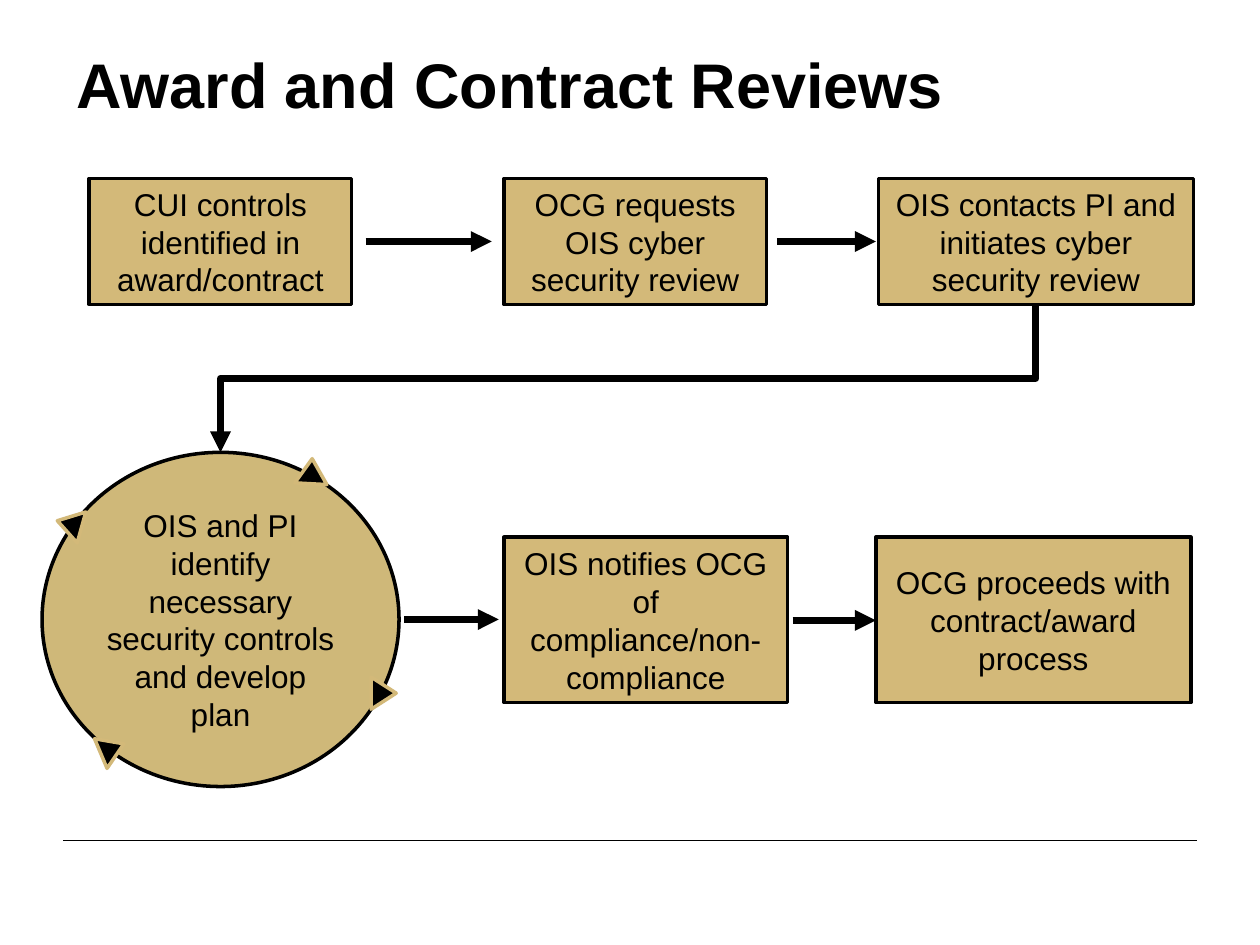
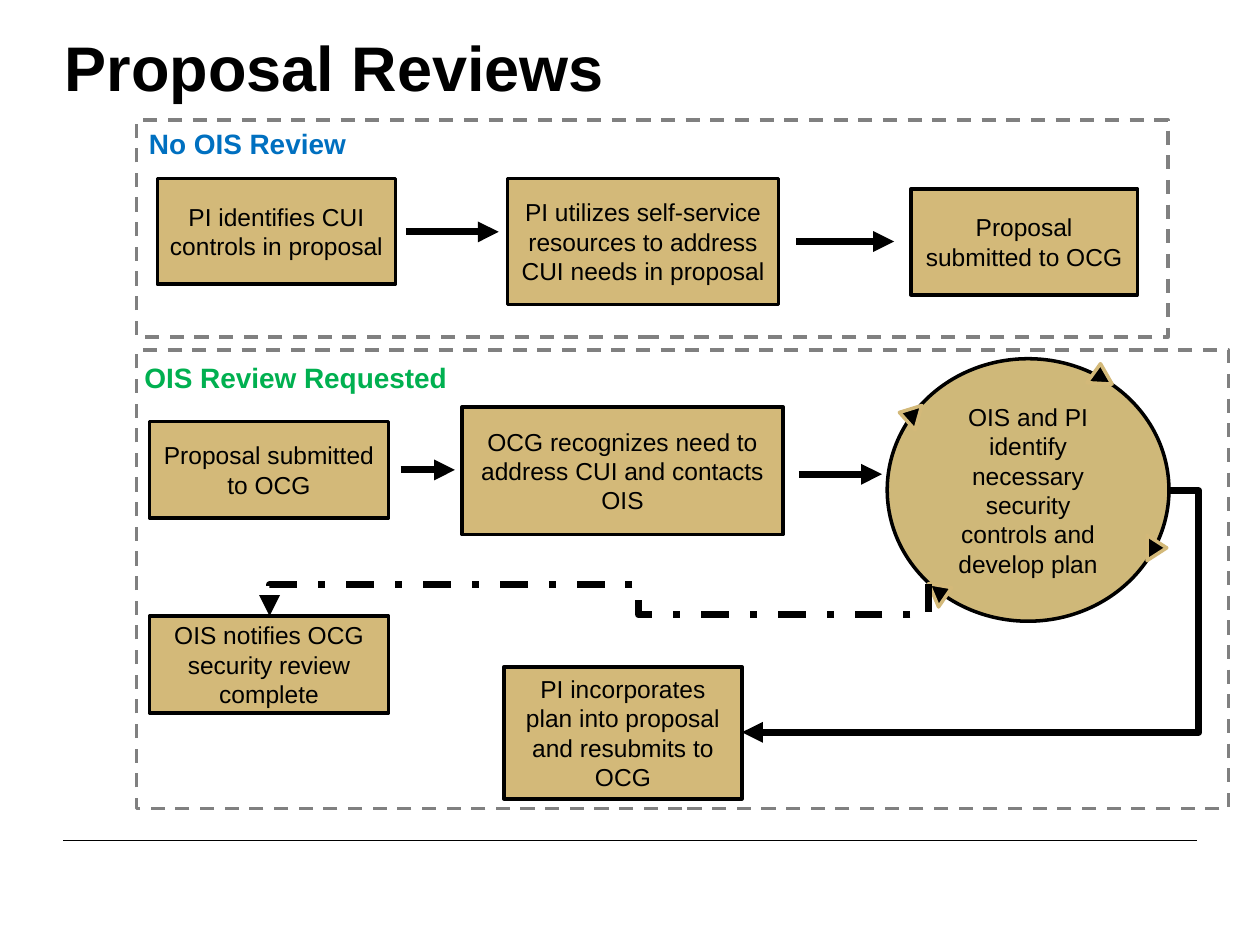
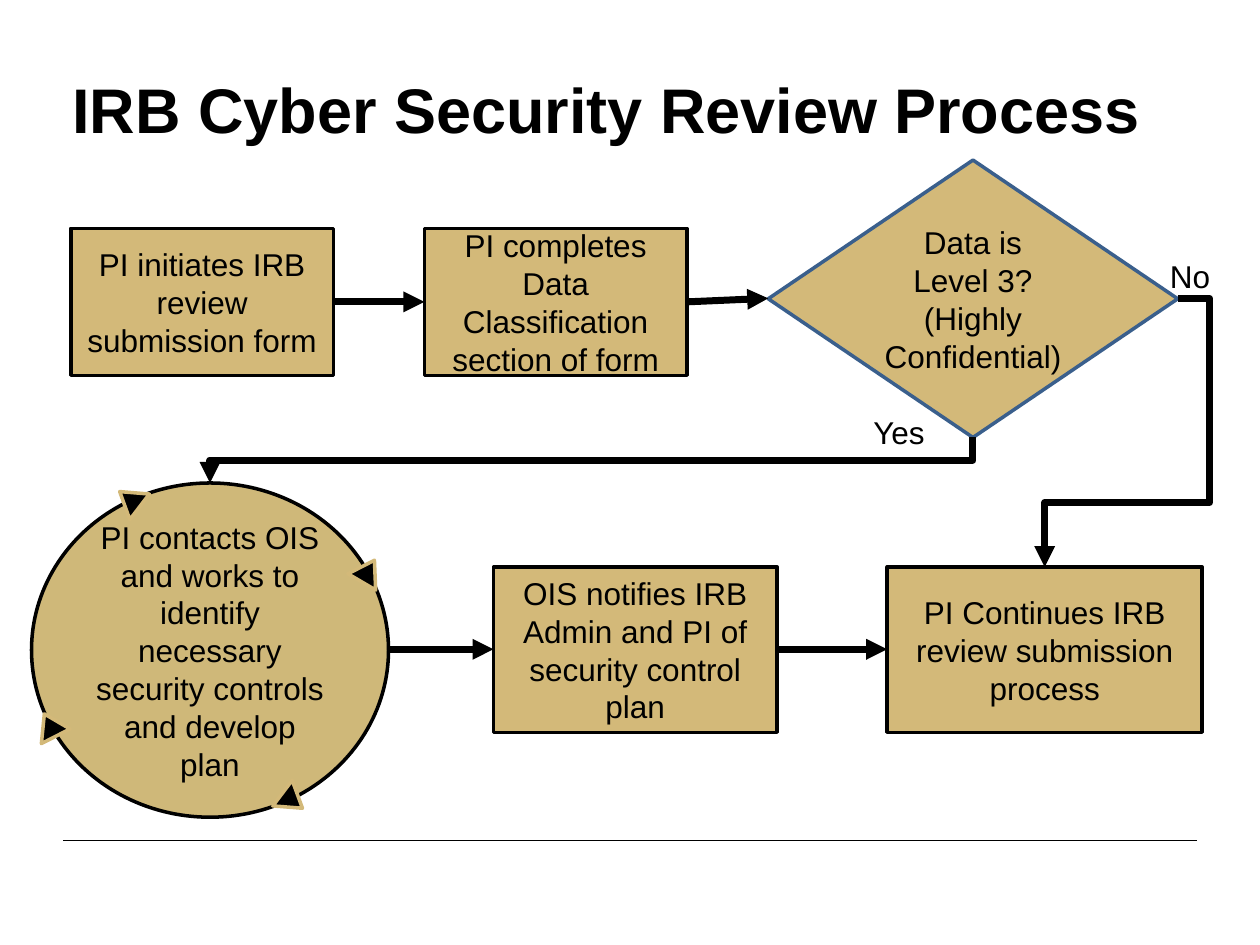
from lxml.etree import SubElement
from pptx import Presentation
from pptx.dml.color import RGBColor
from pptx.enum.dml import MSO_LINE
from pptx.enum.shapes import MSO_CONNECTOR, MSO_SHAPE
from pptx.enum.text import MSO_ANCHOR, MSO_AUTO_SIZE, PP_ALIGN
from pptx.oxml.ns import qn
from pptx.util import Pt

BLACK = RGBColor(0x00, 0x00, 0x00)
GOLD = RGBColor(0xD3, 0xB9, 0x79)
LOOP_GOLD = RGBColor(0xCF, 0xB8, 0x79)
GRAY = RGBColor(0x80, 0x80, 0x80)
BLUE = RGBColor(0x00, 0x70, 0xC0)
GREEN = RGBColor(0x00, 0xB0, 0x50)
STEEL = RGBColor(0x3A, 0x5F, 0x8C)

PLAN = "OIS and PI identify necessary security controls and develop plan"
PLAN_MARKS = [(71, 1.9, 3.1), (15.2, 84.9, 67.1), (3.2, 17.7, 285.6), (91.2, 68.3, 90)]
IRB_MARKS = [(89.8, 22.6, 30.3), (0.7, 68.7, 333), (68.6, 91.3, 127.2), (23, 1.1, 307.4)]


class FlowDeck:
    """Draws flow-chart slides in one shared style."""

    def __init__(self, prs):
        self.prs = prs
        self.s = None
        self.size = 18

    def slide(self, size):
        self.s = self.prs.slides.add_slide(self.prs.slide_layouts[6])
        self.size = size
        self.line((36, 480), (684, 480), width=0.5, head=False)

    def fill_text(self, tf, text, align, **formats):
        p = tf.paragraphs[0]
        p.alignment = align
        r = p.add_run()
        r.text = text
        values = {"name": "Arial", "size": Pt(self.size), "bold": False, **formats}
        r.font.color.rgb = values.pop("color", BLACK)
        for name, value in values.items():
            setattr(r.font, name, value)

    def text(self, x, y, w, h, text, wrap=True, align=PP_ALIGN.LEFT, **formats):
        tf = self.s.shapes.add_textbox(Pt(x), Pt(y), Pt(w), Pt(h)).text_frame
        tf.word_wrap = wrap
        tf.auto_size = MSO_AUTO_SIZE.SHAPE_TO_FIT_TEXT
        self.fill_text(tf, text, align, **formats)

    def title(self, x, y, w, text, align=PP_ALIGN.LEFT):
        self.text(x, y, w, 51, text, wrap=False, align=align, size=Pt(36), bold=True)

    def label(self, x, y, w, text, color):
        self.text(x, y, w, 26.5, text, size=Pt(16), bold=True, color=color)

    def shape(self, x, y, w, h, text="", kind=MSO_SHAPE.RECTANGLE, fill=GOLD, line=BLACK):
        sp = self.s.shapes.add_shape(kind, Pt(x), Pt(y), Pt(w), Pt(h))
        sp.shadow.inherit = False
        if fill is None:
            sp.fill.background()
        else:
            sp.fill.solid()
            sp.fill.fore_color.rgb = fill
        sp.line.color.rgb = line
        sp.line.width = Pt(2)
        if text:
            sp.text_frame.vertical_anchor = MSO_ANCHOR.MIDDLE
            self.fill_text(sp.text_frame, text, PP_ALIGN.CENTER)
        return sp

    def frame(self, x, y, w, h):
        self.shape(x, y, w, h, fill=None, line=GRAY).line.dash_style = MSO_LINE.DASH

    def loop(self, x, y, w, h, text, marks):
        self.shape(x, y, w, h, text, MSO_SHAPE.OVAL, LOOP_GOLD)
        for left, top, angle in marks:
            mark = self.shape(x + w * left / 100, y + h * top / 100, w * 0.09, h * 0.075,
                              kind=MSO_SHAPE.ISOSCELES_TRIANGLE, fill=BLACK, line=GOLD)
            mark.rotation = angle

    def line(self, start, end, kind=MSO_CONNECTOR.STRAIGHT, width=4, dash=None, head=True):
        c = self.s.shapes.add_connector(kind, *(Pt(v) for v in (*start, *end)))
        c.line.color.rgb = BLACK
        c.line.width = Pt(width)
        if dash:
            c.line.dash_style = dash
        if head:
            SubElement(c.get_or_add_ln(), qn("a:tailEnd"), type="triangle")
        SubElement(c._element.spPr, qn("a:effectLst"))
        return c

    def elbow(self, start, end, adjust=(0.5,), vertical=False, dash=None):
        if vertical:
            (x1, y1), (x2, y2) = start, end
            cx, cy = (x1 + x2) / 2, (y1 + y2) / 2
            dx, dy = abs(y2 - y1) / 2, abs(x2 - x1) / 2
            start, end = (cx - dx, cy - dy), (cx + dx, cy + dy)
        c = self.line(start, end, MSO_CONNECTOR.ELBOW, dash=dash)
        sp_pr = c._element.spPr
        if vertical:
            sp_pr.find(qn("a:xfrm")).set("rot", "5400000")
        geom = sp_pr.find(qn("a:prstGeom"))
        geom.set("prst", f"bentConnector{len(adjust) + 2}")
        guides = geom.find(qn("a:avLst"))
        if guides is None:
            guides = SubElement(geom, qn("a:avLst"))
        for i, value in enumerate(adjust, 1):
            SubElement(guides, qn("a:gd"), name=f"adj{i}", fmla=f"val {round(value * 100000)}")


def award_slide(d):
    d.slide(18)
    for x, w, text in [(51, 150, "CUI controls identified in award/contract"),
                       (288, 150, "OCG requests OIS cyber security review"),
                       (502, 180, "OIS contacts PI and initiates cyber security review")]:
        d.shape(x, 102, w, 72, text)
    for x, w, text in [(288, 162, "OIS notifies OCG of compliance/non-compliance"),
                       (500.5, 180, "OCG proceeds with contract/award process")]:
        d.shape(x, 307, w, 94.5, text)
    d.loop(24, 258.5, 204, 191, PLAN, PLAN_MARKS)
    for x1, x2, y in [(209, 281, 138), (444, 500.5, 138), (231, 285, 354), (453, 500.5, 354.5)]:
        d.line((x1, y), (x2, y))
    d.elbow((592, 174), (126, 258.5), vertical=True)
    d.title(36.5, 22.5, 515, "Award and Contract Reviews")


def proposal_slide(d):
    d.slide(14)
    d.title(30, 13, 325.5, "Proposal Reviews")
    for box in [(90, 102, 136, 60.5, "PI identifies CUI controls in proposal"),
                (290, 102, 155, 72,
                 "PI utilizes self-service resources to address CUI needs in proposal"),
                (520.5, 108, 129.5, 60.5, "Proposal submitted to OCG"),
                (85.5, 241, 136.5, 55, "Proposal submitted to OCG"),
                (264, 232.5, 183.5, 73, "OCG recognizes need to address CUI and contacts OIS"),
                (288, 381, 136, 75.5, "PI incorporates plan into proposal and resubmits to OCG"),
                (85.5, 352, 136.5, 55.5, "OIS notifies OCG security review complete")]:
        d.shape(*box)
    d.loop(507, 205, 161, 150, PLAN, PLAN_MARKS)
    for x1, x2, y in [(232, 285, 132.5), (455, 511, 138), (229, 260, 268.5), (456.5, 504, 271)]:
        d.line((x1, y), (x2, y))
    d.elbow((668, 280.5), (424, 418.5), (-0.07,))
    d.elbow((530.5, 333.5), (154, 352), (0.96, 0.44, 0.04), True, MSO_LINE.DASH_DOT)
    d.frame(78, 68.5, 589.5, 124)
    d.frame(78, 200, 624, 262)
    d.label(78, 68.5, 156, "No OIS Review", BLUE)
    d.label(75.5, 202.5, 188.5, "OIS Review Requested", GREEN)


def irb_slide(d):
    d.slide(18)
    d.title(31, 36.5, 631, "IRB Cyber Security Review Process", PP_ALIGN.CENTER)
    d.loop(18, 276, 204, 191,
           "PI contacts OIS and works to identify necessary security controls and develop plan",
           IRB_MARKS)
    for box in [(40.5, 130.5, 150, 84, "PI initiates IRB review submission form"),
                (242.5, 130.5, 150, 84, "PI completes Data Classification section of form"),
                (507, 324, 180, 94.5, "PI Continues IRB review submission process"),
                (282, 324, 162, 94.5, "OIS notifies IRB Admin and PI of security control plan")]:
        d.shape(*box)
    d.shape(439, 91.5, 234, 158.5, "Data is Level 3? (Highly Confidential)",
            MSO_SHAPE.FLOWCHART_DECISION, line=STEEL)
    for start, end in [((191, 172.5), (242.5, 172.5)), ((392.5, 172.5), (439, 170.5)),
                       ((222, 371), (282, 371)), ((444, 371), (507, 371))]:
        d.line(start, end)
    d.elbow((556, 250), (120, 276), vertical=True)
    d.elbow((673, 170.5), (597, 324), (-0.24, 0.76))
    d.text(492, 232.5, 53, 29, "Yes")
    d.text(661.5, 143.5, 42, 29, "No")


def main():
    prs = Presentation()
    prs.slide_width, prs.slide_height = Pt(720), Pt(540)
    d = FlowDeck(prs)
    for build in (award_slide, proposal_slide, irb_slide):
        build(d)
    prs.save("out.pptx")


if __name__ == "__main__":
    main()
